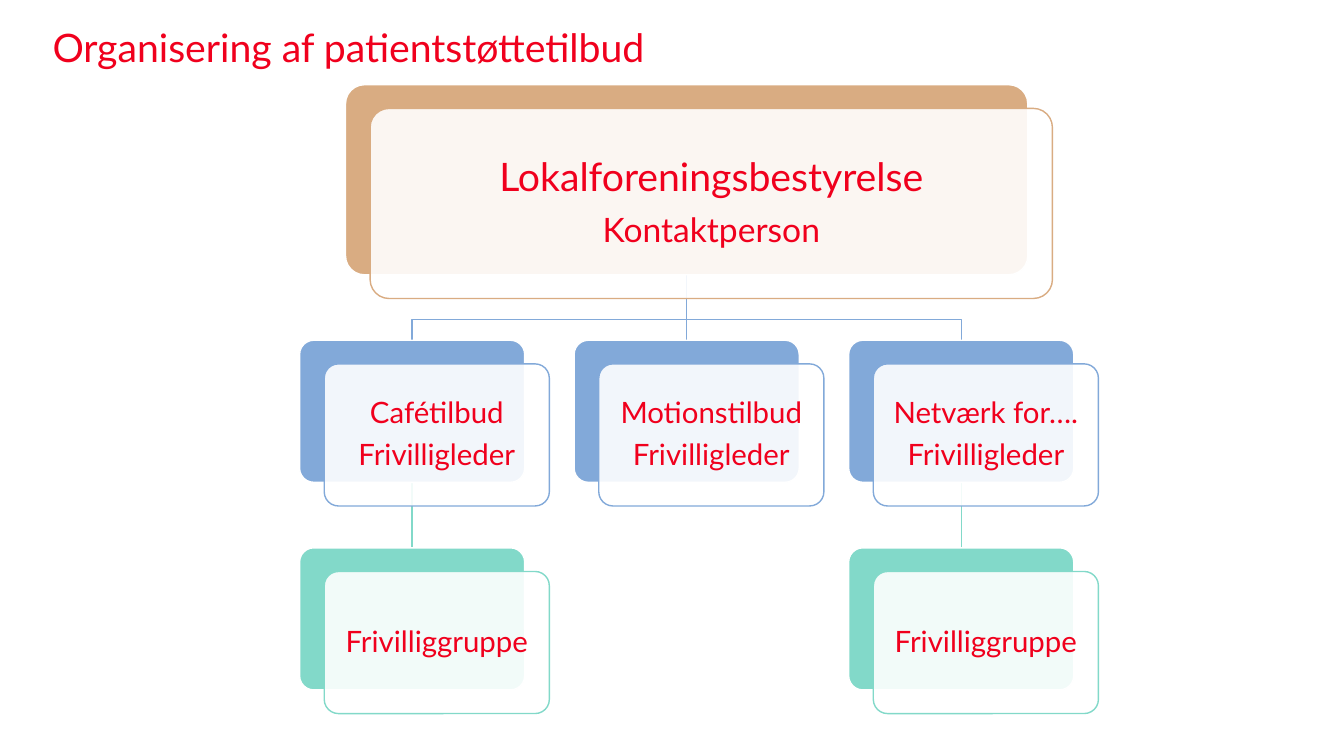
from lxml.etree import SubElement
from pptx import Presentation
from pptx.dml.color import RGBColor
from pptx.enum.shapes import MSO_CONNECTOR, MSO_SHAPE
from pptx.enum.text import MSO_ANCHOR, MSO_AUTO_SIZE, PP_ALIGN
from pptx.oxml.ns import qn
from pptx.util import Pt

COLORS = {
    "text": "F0001D",
    "board": "D9AC82",
    "leader": "82A9D9",
    "group": "82D9C9",
    "white": "FFFFFF",
}


def rgb(name):
    return RGBColor.from_string(COLORS[name])


def write(frame, text, sizes=(28,), align=PP_ALIGN.CENTER,
          anchor=MSO_ANCHOR.MIDDLE, inset=0, after=0.35):
    frame.word_wrap = True
    frame.auto_size = MSO_AUTO_SIZE.NONE
    frame.vertical_anchor = anchor
    frame.margin_left = frame.margin_right = Pt(inset)
    frame.margin_top = frame.margin_bottom = Pt(inset)
    frame.text = text
    for paragraph, size in zip(frame.paragraphs, sizes):
        paragraph.alignment = align
        paragraph.line_spacing = 0.9
        paragraph.space_before = Pt(0)
        paragraph.space_after = Pt(size * after)
        paragraph.font.name = "Lato"
        paragraph.font.size = Pt(size)
        paragraph.font.color.rgb = rgb("text")


deck = Presentation()
deck.slide_width, deck.slide_height = Pt(960), Pt(540)
slide = deck.slides.add_slide(deck.slide_layouts[5])
shapes = slide.shapes

title = shapes.title
title.left, title.top, title.width, title.height = Pt(37.5), Pt(20.2), Pt(884), Pt(40.3)
write(title.text_frame, "Organisering af patientstøttetilbud",
      align=PP_ALIGN.LEFT, anchor=MSO_ANCHOR.TOP, after=0)

CARD_W, CARD_H = 160.8, 101.5
COLUMNS = [214 + 196.1 * column for column in range(3)]
CENTERS = [left + CARD_W / 2 for left in COLUMNS]
BOARD_TOP, LEADER_TOP, GROUP_TOP = 60.5, 243, 391.3
BOARD_W, BOARD_H = 487.4, 135.8
BOARD_BOTTOM, LEADER_BOTTOM = BOARD_TOP + BOARD_H, LEADER_TOP + CARD_H
BRANCH_Y = 228.2
MIDDLE = CENTERS[1]

for center in (CENTERS[0], CENTERS[2]):
    branch = shapes.build_freeform(Pt(MIDDLE), Pt(BOARD_BOTTOM))
    branch.add_line_segments(
        [(Pt(MIDDLE), Pt(BRANCH_Y)), (Pt(center), Pt(BRANCH_Y)), (Pt(center), Pt(LEADER_TOP))],
        close=False)
    elbow = branch.convert_to_shape()
    elbow.shadow.inherit = False
    elbow.fill.background()
    elbow.line.color.rgb = rgb("leader")
    elbow.line.width = Pt(1)

stems = [
    (MIDDLE, BOARD_BOTTOM, LEADER_TOP, "leader"),
    (CENTERS[0], LEADER_BOTTOM, GROUP_TOP, "group"),
    (CENTERS[2], LEADER_BOTTOM, GROUP_TOP, "group"),
]
for x, top, bottom, level in stems:
    stem = shapes.add_connector(MSO_CONNECTOR.STRAIGHT, Pt(x), Pt(top), Pt(x), Pt(bottom))
    stem.line.color.rgb = rgb(level)
    stem.line.width = Pt(1)
    SubElement(stem._element.spPr, qn("a:effectLst"))

cards = [(MIDDLE - BOARD_W / 2, BOARD_TOP, BOARD_W, BOARD_H, "board",
          "Lokalforeningsbestyrelse\nKontaktperson", (28, 24), 8.6)]
for left, offer in zip(COLUMNS, ("Cafétilbud", "Motionstilbud", "Netværk for….")):
    cards.append((left, LEADER_TOP, CARD_W, CARD_H, "leader",
                  offer + "\nFrivilligleder", (21, 21), 6.3))
for left in (COLUMNS[0], COLUMNS[2]):
    cards.append((left, GROUP_TOP, CARD_W, CARD_H, "group", "Frivilliggruppe", (21,), 6.3))

for left, top, width, height, level, text, sizes, inset in cards:
    for shift, fill, outline in ((0, level, "white"), (1, "white", level)):
        card = shapes.add_shape(MSO_SHAPE.ROUNDED_RECTANGLE, Pt(left + 17.6 * shift),
                                Pt(top + 16.9 * shift), Pt(width), Pt(height))
        card.adjustments[0] = 0.1
        card.shadow.inherit = False
        card.fill.solid()
        card.fill.fore_color.rgb = rgb(fill)
        card.line.color.rgb = rgb(outline)
        card.line.width = Pt(1)
    tint = card._element.spPr.find(qn("a:solidFill")).find(qn("a:srgbClr"))
    SubElement(tint, qn("a:alpha"), val="90000")
    write(card.text_frame, text, sizes=sizes, inset=inset)

deck.save("out.pptx")
